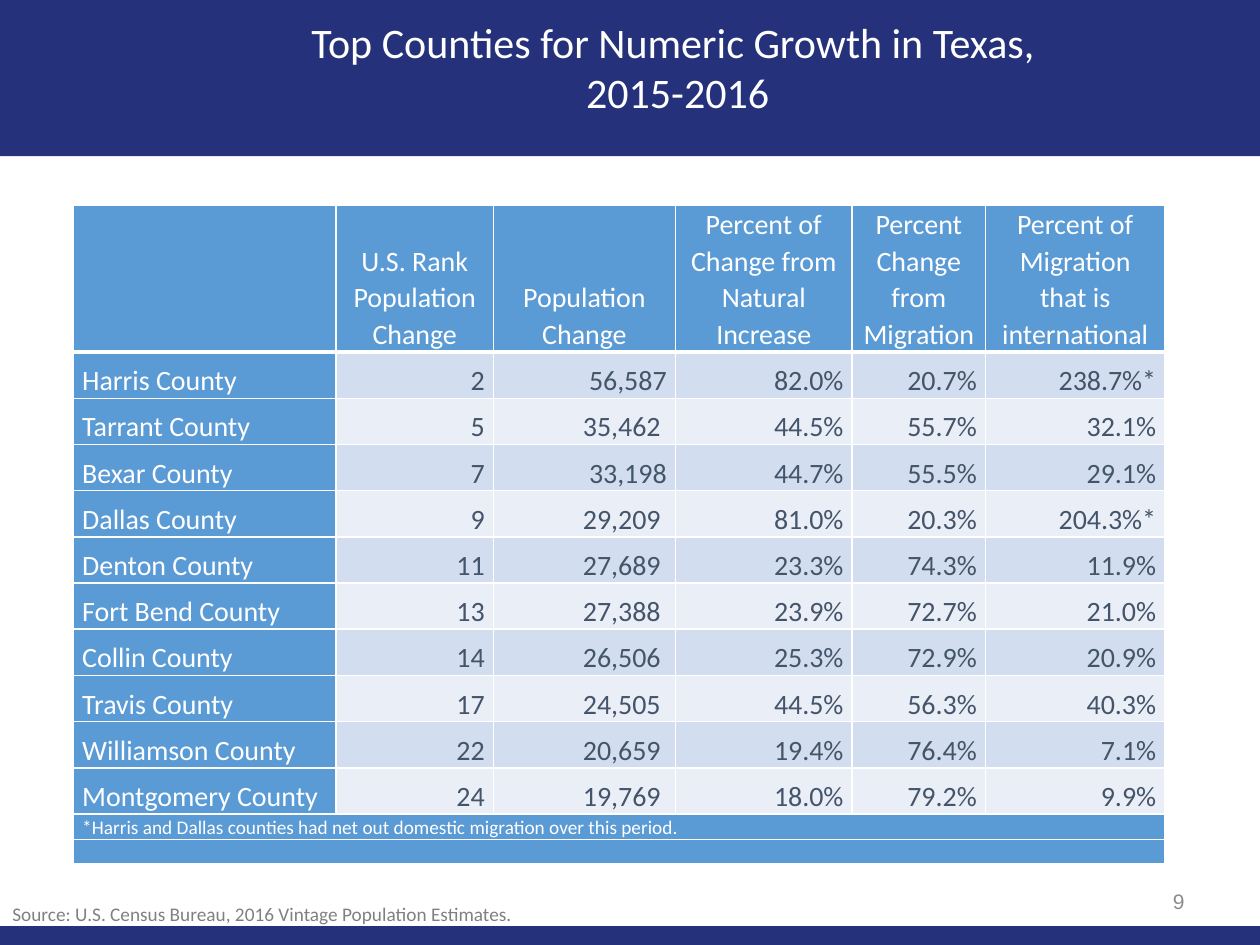
from dataclasses import dataclass

from lxml import etree
from pptx import Presentation
from pptx.dml.color import RGBColor
from pptx.enum.shapes import MSO_SHAPE
from pptx.enum.text import MSO_ANCHOR, MSO_AUTO_SIZE, PP_ALIGN
from pptx.oxml.ns import qn
from pptx.util import Pt

RECTANGLE = MSO_SHAPE.RECTANGLE
TOP, MIDDLE, BOTTOM = MSO_ANCHOR.TOP, MSO_ANCHOR.MIDDLE, MSO_ANCHOR.BOTTOM
LEFT, CENTER, RIGHT = PP_ALIGN.LEFT, PP_ALIGN.CENTER, PP_ALIGN.RIGHT
NO_AUTOFIT = MSO_AUTO_SIZE.NONE
TITLE_ONLY = 5


@dataclass(frozen=True)
class Theme:
    navy: str = "25327B"
    blue: str = "5B9BD5"
    bands: tuple = ("D2DEEF", "EAEFF7")
    white: str = "FFFFFF"
    body: str = "44546A"
    source: str = "808080"
    number: str = "8C8C8C"
    font: str = "Calibri"
    number_font: str = "Arial"
    title_size: int = 24
    table_size: int = 16
    number_size: int = 12
    note_size: int = 11
    empty_size: int = 10


THEME = Theme()

# Table content
HEADINGS = ["", "U.S. Rank Population Change", "Population Change",
            "Percent of Change from Natural Increase",
            "Percent Change from Migration",
            "Percent of Migration that is international"]
COUNTIES = [
    ("Harris County", "2", "56,587", "82.0%", "20.7%", "238.7%*"),
    ("Tarrant County", "5", "35,462", "44.5%", "55.7%", "32.1%"),
    ("Bexar County", "7", "33,198", "44.7%", "55.5%", "29.1%"),
    ("Dallas County", "9", "29,209", "81.0%", "20.3%", "204.3%*"),
    ("Denton County", "11", "27,689", "23.3%", "74.3%", "11.9%"),
    ("Fort Bend County", "13", "27,388", "23.9%", "72.7%", "21.0%"),
    ("Collin County", "14", "26,506", "25.3%", "72.9%", "20.9%"),
    ("Travis County", "17", "24,505", "44.5%", "56.3%", "40.3%"),
    ("Williamson County", "22", "20,659", "19.4%", "76.4%", "7.1%"),
    ("Montgomery County", "24", "19,769", "18.0%", "79.2%", "9.9%"),
]
FOOTNOTE = "*Harris and Dallas counties had net out domestic migration over this period."
COLUMN_WIDTHS = [150, 90, 104, 101, 76.2, 102.5]
ROW_HEIGHTS = [81.8] + [26.4] * len(COUNTIES) + [14.2, 13.7]
POPULATION_COLUMN = 2
FLUSH_COUNTIES = ("Harris County", "Bexar County")  # population sits at the cell edge


def write_text(text_frame, text, *, size, color, font=THEME.font, align=LEFT,
               line_spacing=None):
    """Write one paragraph per line of text in a single format."""
    for index, line in enumerate(text.split("\n")):
        paragraph = text_frame.paragraphs[0] if index == 0 else text_frame.add_paragraph()
        paragraph.alignment = align
        if line_spacing:
            paragraph.line_spacing = line_spacing
        if line:
            run = paragraph.add_run()
            run.text = line
            run.font.size = Pt(size)
            run.font.name = font
            run.font.bold = False
            run.font.color.rgb = RGBColor.from_string(color)
        else:
            # An empty paragraph takes its height from the end mark
            end_mark = etree.SubElement(paragraph._p, qn("a:endParaRPr"))
            end_mark.set("sz", str(size * 100))


def set_borders(cell, color, bottom_width):
    properties = cell._tc.get_or_add_tcPr()
    for side, width in (("L", 1), ("R", 1), ("T", 1), ("B", bottom_width)):
        line = etree.SubElement(properties, qn(f"a:ln{side}"), w=str(Pt(width)))
        fill = etree.SubElement(line, qn("a:solidFill"))
        etree.SubElement(fill, qn("a:srgbClr"), val=color)


class SlideBuilder:
    def __init__(self, slide, theme):
        self.slide = slide
        self.theme = theme

    def band(self, top, height):
        shape = self.slide.shapes.add_shape(RECTANGLE, 0, Pt(top), Pt(720), Pt(height))
        shape.shadow.inherit = False
        shape.fill.solid()
        shape.fill.fore_color.rgb = RGBColor.from_string(self.theme.navy)
        shape.line.fill.background()
        # Bands lie behind the title placeholder
        self.slide.shapes._spTree.insert(2, shape._element)

    def title(self, text, left, top, width, height):
        title = self.slide.shapes.title
        title.left, title.top = Pt(left), Pt(top)
        title.width, title.height = Pt(width), Pt(height)
        title.text_frame.auto_size = NO_AUTOFIT
        title.text_frame.vertical_anchor = TOP
        write_text(title.text_frame, text, size=self.theme.title_size,
                   color=self.theme.white, align=CENTER)

    def text_box(self, text, left, top, width, height, *, anchor=TOP, wrap=True, **text_format):
        box = self.slide.shapes.add_textbox(Pt(left), Pt(top), Pt(width), Pt(height))
        box.text_frame.word_wrap = wrap
        box.text_frame.vertical_anchor = anchor
        write_text(box.text_frame, text, **text_format)

    def cell(self, cell, text, fill, *, bottom_width=1, right_margin=5, **text_format):
        cell.margin_left, cell.margin_right = Pt(5), Pt(right_margin)
        cell.margin_top = cell.margin_bottom = 0
        cell.vertical_anchor = BOTTOM
        set_borders(cell, self.theme.white, bottom_width)
        cell.fill.solid()
        cell.fill.fore_color.rgb = RGBColor.from_string(fill)
        write_text(cell.text_frame, text, line_spacing=1.07, **text_format)

    def county_table(self, left, top):
        theme = self.theme
        frame = self.slide.shapes.add_table(
            len(ROW_HEIGHTS), len(COLUMN_WIDTHS), Pt(left), Pt(top),
            Pt(sum(COLUMN_WIDTHS)), Pt(sum(ROW_HEIGHTS)))
        table = frame.table
        table.first_row = table.horz_banding = False
        for column, width in zip(table.columns, COLUMN_WIDTHS):
            column.width = Pt(width)
        for row, height in zip(table.rows, ROW_HEIGHTS):
            row.height = Pt(height)

        # Heading row
        for column, heading in enumerate(HEADINGS):
            self.cell(table.cell(0, column), heading, theme.blue, bottom_width=3,
                      size=theme.table_size, color=theme.white, align=CENTER)

        # County rows
        for row, county in enumerate(COUNTIES, start=1):
            self.cell(table.cell(row, 0), county[0], theme.blue,
                      size=theme.table_size, color=theme.white)
            for column, value in enumerate(county[1:], start=1):
                inset = column == POPULATION_COLUMN and county[0] not in FLUSH_COUNTIES
                self.cell(table.cell(row, column), value, theme.bands[(row - 1) % 2],
                          right_margin=8.5 if inset else 5,
                          size=theme.table_size, color=theme.body, align=RIGHT)

        # Note rows across the full width
        last_column = len(COLUMN_WIDTHS) - 1
        notes = ((FOOTNOTE, theme.note_size), ("", theme.empty_size))
        for row, (note, size) in enumerate(notes, start=len(COUNTIES) + 1):
            table.cell(row, 0).merge(table.cell(row, last_column))
            for column in range(last_column + 1):
                self.cell(table.cell(row, column), "" if column else note, theme.blue,
                          size=theme.empty_size if column else size, color=theme.white)


def main():
    presentation = Presentation()
    presentation.slide_width, presentation.slide_height = Pt(720), Pt(540)
    slide = presentation.slides.add_slide(presentation.slide_layouts[TITLE_ONLY])
    builder = SlideBuilder(slide, THEME)

    # Header and footer bands
    builder.band(0, 89.2)
    builder.band(529.2, 10.8)

    builder.title("Top Counties for Numeric Growth in Texas, \n2015-2016", 138.2, 5.8, 498.2, 65.5)
    builder.county_table(42, 117.5)

    # Slide number and source
    builder.text_box("9", 516.2, 500.4, 167.8, 28.8, anchor=MIDDLE, align=RIGHT,
                     size=THEME.number_size, color=THEME.number, font=THEME.number_font)
    builder.text_box("Source: U.S. Census Bureau, 2016 Vintage Population Estimates.",
                     0, 512, 305.3, 20.9, wrap=False,
                     size=THEME.note_size, color=THEME.source)

    presentation.save("out.pptx")


if __name__ == "__main__":
    main()
